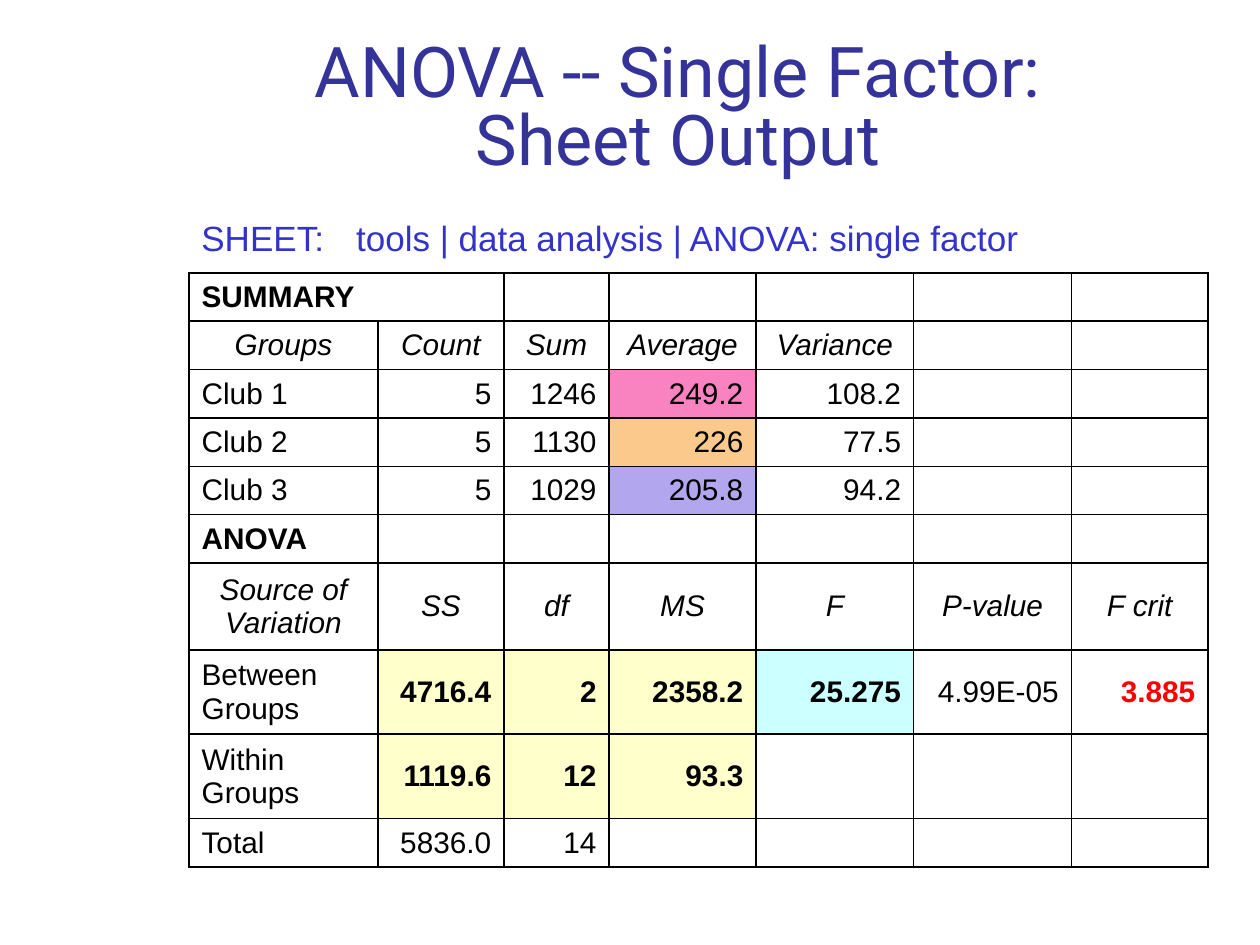
from lxml.etree import SubElement
from pptx import Presentation
from pptx.dml.color import RGBColor
from pptx.enum.text import MSO_ANCHOR, MSO_AUTO_SIZE, PP_ALIGN
from pptx.oxml.ns import qn
from pptx.util import Cm, Pt

THEME = {
    "title_font": "Roboto", "body_font": "Arial",
    "title_size": 40, "lead_size": 20, "table_size": 17,
    "title": "333399", "lead": "3333CC", "ink": "000000", "critical": "FF0000",
    "club1": "F983C1", "club2": "FCC98C", "club3": "B2A6EE",
    "variation": "FFFFCC", "statistic": "CCFFFF",
}

TITLE = ["ANOVA -- Single Factor:", "Sheet Output"]
LEAD = "SHEET:\ttools | data analysis | ANOVA: single factor"

ROWS = [
    ("section", 0.97, ["SUMMARY"]),
    ("header", 0.97, ["Groups", "Count", "Sum", "Average", "Variance"]),
    ("data", 0.97, ["Club 1", "5", "1246", "249.2", "108.2"]),
    ("data", 0.97, ["Club 2", "5", "1130", "226", "77.5"]),
    ("data", 0.97, ["Club 3", "5", "1029", "205.8", "94.2"]),
    ("section", 0.97, ["ANOVA"]),
    ("header", 1.75, ["Source of Variation", "SS", "df", "MS", "F", "P-value", "F crit"]),
    ("data", 1.7, ["Between Groups", "4716.4", "2", "2358.2", "25.275", "4.99E-05", "3.885"]),
    ("data", 1.7, ["Within\nGroups", "1119.6", "12", "93.3"]),
    ("data", 0.97, ["Total", "5836.0", "14"]),
]
COLUMN_WIDTHS = [3.81, 2.54, 2.12, 2.96, 3.18, 3.18, 2.75]
FILLS = {(2, 3): "club1", (3, 3): "club2", (4, 3): "club3", (7, 4): "statistic"}
FILLS.update({(row, column): "variation" for row in (7, 8) for column in (1, 2, 3)})
BOLD_CELLS = {(7, 1), (7, 2), (7, 3), (7, 4), (7, 6), (8, 1), (8, 2), (8, 3)}
COLORS = {(7, 6): "critical"}


def write(frame, text, font="body_font", size="table_size", color="ink",
          bold=False, italic=False, align=PP_ALIGN.LEFT):
    for index, line in enumerate(text.split("\n")):
        paragraph = frame.paragraphs[0] if index == 0 else frame.add_paragraph()
        paragraph.alignment = align
        if not line:
            SubElement(paragraph._p, qn("a:endParaRPr"), sz=str(THEME[size] * 100))
            continue
        span = paragraph.add_run()
        span.text = line
        span.font.name = THEME[font]
        span.font.size = Pt(THEME[size])
        span.font.bold = bold
        span.font.italic = italic
        span.font.color.rgb = RGBColor.from_string(THEME[color])


def add_borders(cell):
    properties = cell._tc.get_or_add_tcPr()
    for side in ("lnL", "lnR", "lnT", "lnB"):
        line = SubElement(properties, qn(f"a:{side}"), w=str(Pt(1)))
        fill = SubElement(line, qn("a:solidFill"))
        SubElement(fill, qn("a:srgbClr"), val=THEME["ink"])


def format_cell(cell, place, kind, text):
    if kind == "header":
        align = PP_ALIGN.CENTER
    elif kind == "data" and place[1] > 0:
        align = PP_ALIGN.RIGHT
    else:
        align = PP_ALIGN.LEFT
    write(cell.text_frame, text, color=COLORS.get(place, "ink"), align=align,
          bold=kind == "section" or place in BOLD_CELLS, italic=kind == "header")
    cell.vertical_anchor = MSO_ANCHOR.MIDDLE
    add_borders(cell)
    if place in FILLS:
        cell.fill.solid()
        cell.fill.fore_color.rgb = RGBColor.from_string(THEME[FILLS[place]])
    else:
        cell.fill.background()


def add_title(page):
    box = page.shapes.title
    box.left, box.top, box.width, box.height = Cm(2.97), Cm(0.43), Cm(21.39), Cm(3.3)
    frame = box.text_frame
    frame.auto_size = MSO_AUTO_SIZE.NONE
    frame.vertical_anchor = MSO_ANCHOR.TOP
    write(frame, "\n".join(TITLE), font="title_font", size="title_size",
          color="title", align=PP_ALIGN.CENTER)
    frame.paragraphs[1].line_spacing = 0.8


def add_lead(page):
    box = page.shapes.add_textbox(Cm(3.81), Cm(4.24), Cm(17.02), Cm(1.09))
    frame = box.text_frame
    frame.word_wrap = True
    properties = frame.paragraphs[0]._p.get_or_add_pPr()
    tabs = SubElement(properties, qn("a:tabLst"))
    SubElement(tabs, qn("a:tab"), pos=str(Cm(3.12)), algn="l")
    write(frame, LEAD, size="lead_size", color="lead")


def add_results(page):
    holder = page.shapes.add_table(
        len(ROWS), len(COLUMN_WIDTHS), Cm(3.81), Cm(5.5),
        Cm(sum(COLUMN_WIDTHS)), Cm(sum(height for _, height, _ in ROWS)))
    table = holder.table
    table.first_row = False
    table.horz_banding = False
    for column, width in zip(table.columns, COLUMN_WIDTHS):
        column.width = Cm(width)
    for row, (kind, height, texts) in enumerate(ROWS):
        table.rows[row].height = Cm(height)
        for column in range(len(COLUMN_WIDTHS)):
            text = texts[column] if column < len(texts) else ""
            format_cell(table.cell(row, column), (row, column), kind, text)
    table.cell(0, 0).merge(table.cell(0, 1))


def main():
    deck = Presentation()
    deck.slide_width, deck.slide_height = Cm(25.4), Cm(19.05)
    page = deck.slides.add_slide(deck.slide_layouts[5])
    add_title(page)
    add_lead(page)
    add_results(page)
    deck.save("out.pptx")


if __name__ == "__main__":
    main()
